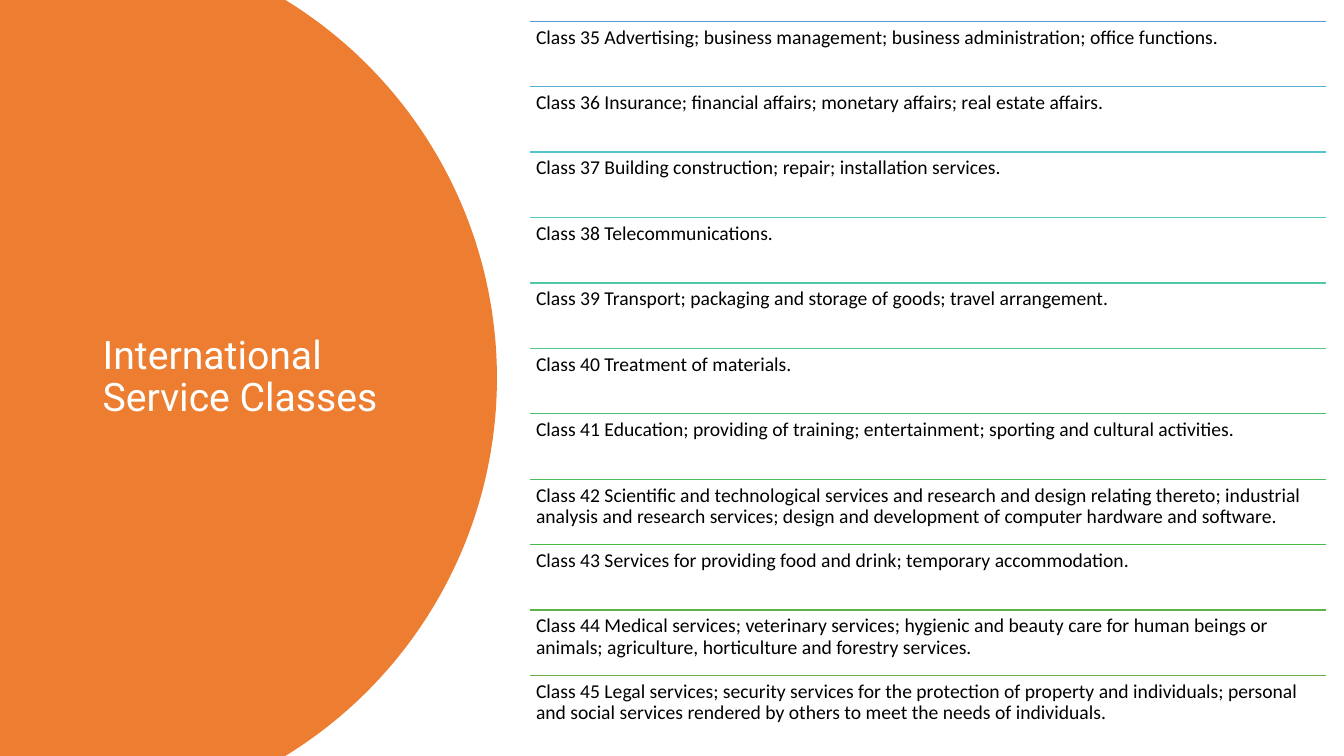
import math
from dataclasses import dataclass

import pptx
import pptx.dml.color
import pptx.enum.shapes
import pptx.enum.text
import pptx.oxml.ns
import pptx.util
from lxml import etree

Pt = pptx.util.Pt

TITLE = "International Service Classes"
# class number, description, rule colour
CLASSES = [
    (35, "Advertising; business management; business administration; office functions.", "5B9BD5"),
    (36, "Insurance; financial affairs; monetary affairs; real estate affairs.", "58AFD2"),
    (37, "Building construction; repair; installation services.", "55C3CF"),
    (38, "Telecommunications.", "53CBC1"),
    (39, "Transport; packaging and storage of goods; travel arrangement.", "50C8A7"),
    (40, "Treatment of materials.", "4DC58D"),
    (41, "Education; providing of training; entertainment; sporting and cultural activities.", "4BC174"),
    (42, "Scientific and technological services and research and design relating thereto; "
         "industrial analysis and research services; design and development of computer "
         "hardware and software.", "49BD5B"),
    (43, "Services for providing food and drink; temporary accommodation.", "4ABA46"),
    (44, "Medical services; veterinary services; hygienic and beauty care for human beings "
         "or animals; agriculture, horticulture and forestry services.", "5EB347"),
    (45, "Legal services; security services for the protection of property and individuals; "
         "personal and social services rendered by others to meet the needs of individuals.", "70AD47"),
]


@dataclass(frozen=True)
class Theme:
    panel: str = "ED7D31"
    title_color: str = "FFFFFF"
    title_font: str = "Roboto"
    title_size: float = 28
    body_color: str = "000000"
    body_font: str = "Calibri"
    body_size: float = 14
    rule_width: float = 1
    line_spacing: float = 0.9


THEME = Theme()
SLIDE_WIDTH, SLIDE_HEIGHT = 960, 540
PANEL_RIGHT, PANEL_RADIUS, ARC_STEPS = 355, 316.7, 120
TITLE_BOX = (66.2, 50.4, 232.6, 438.5)
LIST_LEFT, LIST_TOP, LIST_WIDTH, ROW_HEIGHT = 378.7, 15.2, 568.8, 46.73
ROW_INSET = 4.2


def rgb(value):
    return pptx.dml.color.RGBColor.from_string(value)


def format_paragraph(para, font_name, size, color):
    para.alignment = pptx.enum.text.PP_ALIGN.LEFT
    para.line_spacing = THEME.line_spacing
    para.font.name = font_name
    para.font.size = Pt(size)
    para.font.color.rgb = rgb(color)


def add_panel(slide):
    """Draw the left panel, whose right edge is an arc from slide top to bottom."""
    half_angle = math.asin(SLIDE_HEIGHT / 2 / PANEL_RADIUS)
    center_x = PANEL_RIGHT - PANEL_RADIUS
    angles = [half_angle * (2 * step / ARC_STEPS - 1) for step in range(ARC_STEPS + 1)]
    arc = [(Pt(center_x + PANEL_RADIUS * math.cos(angle)),
            Pt(SLIDE_HEIGHT / 2 + PANEL_RADIUS * math.sin(angle))) for angle in angles]
    builder = slide.shapes.build_freeform(0, 0)
    builder.add_line_segments(arc + [(0, Pt(SLIDE_HEIGHT))], close=True)
    panel = builder.convert_to_shape()
    panel.shadow.inherit = False
    panel.fill.solid()
    panel.fill.fore_color.rgb = rgb(THEME.panel)
    panel.line.fill.background()
    return panel


def set_title(title):
    title.left, title.top, title.width, title.height = map(Pt, TITLE_BOX)
    frame = title.text_frame
    frame.text = TITLE
    frame.word_wrap = True
    frame.auto_size = pptx.enum.text.MSO_AUTO_SIZE.NONE
    frame.vertical_anchor = pptx.enum.text.MSO_ANCHOR.MIDDLE
    format_paragraph(frame.paragraphs[0], THEME.title_font, THEME.title_size, THEME.title_color)


def add_rule(shapes, top, color):
    rule = shapes.add_connector(
        pptx.enum.shapes.MSO_CONNECTOR.STRAIGHT,
        Pt(LIST_LEFT), Pt(top), Pt(LIST_LEFT + LIST_WIDTH), Pt(top))
    rule.line.color.rgb = rgb(color)
    rule.line.width = Pt(THEME.rule_width)
    properties = rule._element.find(pptx.oxml.ns.qn("p:spPr"))
    etree.SubElement(properties, pptx.oxml.ns.qn("a:effectLst"))


def add_class_text(shapes, top, text):
    box = shapes.add_textbox(Pt(LIST_LEFT), Pt(top), Pt(LIST_WIDTH), Pt(ROW_HEIGHT))
    frame = box.text_frame
    frame.word_wrap = True
    frame.margin_left = frame.margin_right = Pt(ROW_INSET)
    frame.margin_top = frame.margin_bottom = Pt(ROW_INSET)
    frame.text = text
    format_paragraph(frame.paragraphs[0], THEME.body_font, THEME.body_size, THEME.body_color)


def main():
    deck = pptx.Presentation()
    deck.slide_width, deck.slide_height = Pt(SLIDE_WIDTH), Pt(SLIDE_HEIGHT)
    slide = deck.slides.add_slide(deck.slide_layouts.get_by_name("Title Only"))
    title = slide.shapes.title
    set_title(title)
    panel = add_panel(slide)
    title._element.addprevious(panel._element)

    class_list = slide.shapes.add_group_shape()
    for row, (number, description, color) in enumerate(CLASSES):
        top = LIST_TOP + row * ROW_HEIGHT
        add_rule(class_list.shapes, top, color)
        add_class_text(class_list.shapes, top, f"Class {number} {description}")
    deck.save("out.pptx")


if __name__ == "__main__":
    main()
